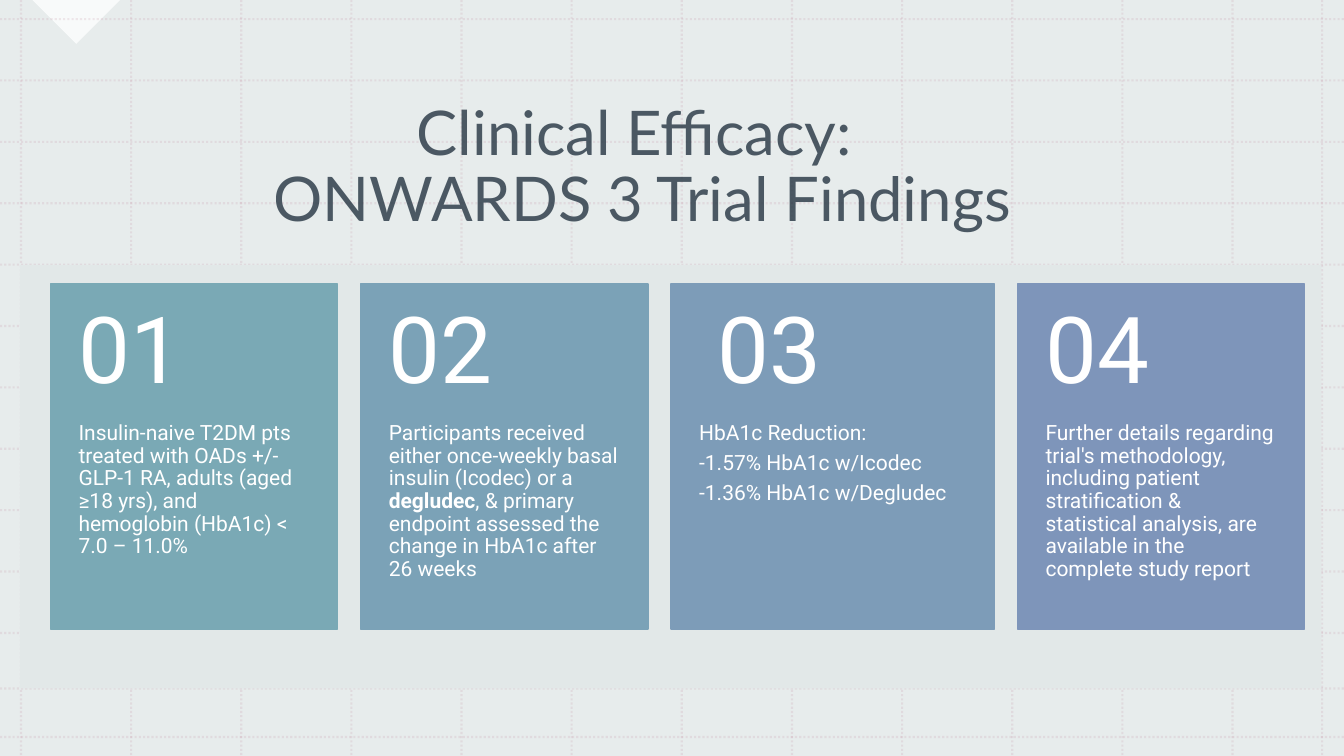
from lxml.etree import SubElement
from pptx import Presentation
from pptx.dml.color import RGBColor
from pptx.enum.dml import MSO_LINE
from pptx.enum.shapes import MSO_CONNECTOR, MSO_SHAPE
from pptx.enum.text import MSO_ANCHOR, PP_ALIGN
from pptx.oxml.ns import qn
from pptx.util import Cm, Pt

WIDTH, HEIGHT = 33.87, 19.05
CARD_LEFT, CARD_TOP, CARD_GAP = 1.27, 7.16, 0.58
CARD_WIDTH, CARD_HEIGHT, NUMBER_HEIGHT = 7.24, 8.69, 3.48

CARDS = [
    ("01", "7AA9B5", 7.24, [[(
        "Insulin-naive T2DM pts treated with OADs +/- GLP-1 RA, adults "
        "(aged ≥18 yrs), and hemoglobin (HbA1c) < 7.0 – 11.0%", False)]]),
    ("02", "7BA2B7", 7.24, [[
        ("Participants received either once-weekly basal insulin (Icodec) or a ", False),
        ("degludec", True),
        (", & primary endpoint assessed the change in HbA1c after 26 weeks", False)]]),
    ("03", "7D9CB8", 8.15, [
        [("HbA1c Reduction:", False)],
        [("-1.57% HbA1c w/Icodec", False)],
        [("-1.36% HbA1c w/Degludec", False)]]),
    ("04", "7E95BA", 7.24, [[(
        "Further details regarding trial's methodology, including patient "
        "stratification & statistical analysis, are available in the "
        "complete study report", False)]]),
]


def set_color(fill, color, opacity=100):
    fill.solid()
    fill.fore_color.rgb = RGBColor.from_string(color)
    if opacity < 100:
        rgb = fill._xPr.find(".//" + qn("a:srgbClr"))
        SubElement(rgb, qn("a:alpha"), val=str(opacity * 1000))


def add_block(s, left, top, width, height, color, opacity=100,
              kind=MSO_SHAPE.RECTANGLE, outlined=False):
    sp = s.shapes.add_shape(kind, Cm(left), Cm(top), Cm(width), Cm(height))
    sp.shadow.inherit = False
    set_color(sp.fill, color, opacity)
    if outlined:
        set_color(sp.line.fill, color)
        sp.line.width = Pt(1)
    else:
        sp.line.fill.background()
    return sp


def add_grid_line(s, x1, y1, x2, y2):
    line = s.shapes.add_connector(MSO_CONNECTOR.STRAIGHT, Cm(x1), Cm(y1), Cm(x2), Cm(y2))
    set_color(line.line.fill, "C796A6", 20)
    line.line.width = Pt(1.5)
    line.line.dash_style = MSO_LINE.ROUND_DOT
    SubElement(line._element.spPr, qn("a:effectLst"))


def add_grid(s):
    columns = [0.53 + i * (31.06 - 0.53) / 11 for i in range(12)] + [33.32]
    rows = [0.48 + i * (15.95 - 0.48) / 10 for i in range(11)] + [17.35, 18.57]
    for x in columns:
        add_grid_line(s, x, 0, x, HEIGHT)
    for y in rows:
        add_grid_line(s, 0, y, WIDTH, y)


def add_text_frame(s, left, top, width, height, insets, anchor):
    tf = s.shapes.add_textbox(Cm(left), Cm(top), Cm(width), Cm(height)).text_frame
    tf.word_wrap = True
    tf.vertical_anchor = anchor
    tf.margin_left, tf.margin_top, tf.margin_right, tf.margin_bottom = map(Cm, insets)
    return tf


def add_run(p, text, font, size, color, opacity=100, bold=False):
    r = p.add_run()
    r.text = text
    r.font.name = font
    r.font.size = Pt(size)
    r.font.bold = bold
    set_color(r.font.fill, color, opacity)


def add_title(s, lines):
    tf = add_text_frame(s, 1.27, 2.01, 29.85, 4.47, (0.25, 0.13, 0.25, 0.13),
                        MSO_ANCHOR.MIDDLE)
    p = tf.paragraphs[0]
    p.alignment = PP_ALIGN.CENTER
    p.line_spacing = 0.9
    for i, line in enumerate(lines):
        if i:
            p.add_line_break()
        add_run(p, line, "Lato", 44, "243441", 80)


def fill_paragraphs(tf, paragraphs, size):
    for i, runs in enumerate(paragraphs):
        p = tf.add_paragraph() if i else tf.paragraphs[0]
        p.line_spacing = 0.9
        p.space_after = Pt(size * 0.35)
        for text, bold in runs:
            add_run(p, text, "Roboto", size, "FFFFFF", bold=bold)


def add_card(s, left, width, number, color, paragraphs):
    add_block(s, left, CARD_TOP, width, CARD_HEIGHT, color, outlined=True)
    body = add_text_frame(s, left, CARD_TOP + NUMBER_HEIGHT, width,
                          CARD_HEIGHT - NUMBER_HEIGHT, (0.71, 0, 0.71, 0.91),
                          MSO_ANCHOR.TOP)
    fill_paragraphs(body, paragraphs, 15)
    head = add_text_frame(s, left + (width - CARD_WIDTH) / 2, CARD_TOP, CARD_WIDTH,
                          NUMBER_HEIGHT, (0.71, 0.46, 0.71, 0.46), MSO_ANCHOR.MIDDLE)
    fill_paragraphs(head, [[(number, False)]], 66)


def main():
    prs = Presentation()
    prs.slide_width, prs.slide_height = Cm(WIDTH), Cm(HEIGHT)
    s = prs.slides.add_slide(prs.slide_layouts[6])
    set_color(s.background.fill, "FFFFFF")
    add_block(s, 0, 0, WIDTH, HEIGHT, "E2E8E8", 80)
    corner = add_block(s, 1.14, -0.79, 1.57, 1.57, "FFFFFF", 75, MSO_SHAPE.RIGHT_TRIANGLE)
    corner.rotation = 315
    add_grid(s)
    add_title(s, ["Clinical Efficacy: ", "ONWARDS 3 Trial Findings"])
    add_block(s, 0.51, 6.68, 32.79, 10.67, "E2E8E8")
    left = CARD_LEFT
    for number, color, width, paragraphs in CARDS:
        add_card(s, left, width, number, color, paragraphs)
        left += width + CARD_GAP
    prs.save("out.pptx")


if __name__ == "__main__":
    main()
